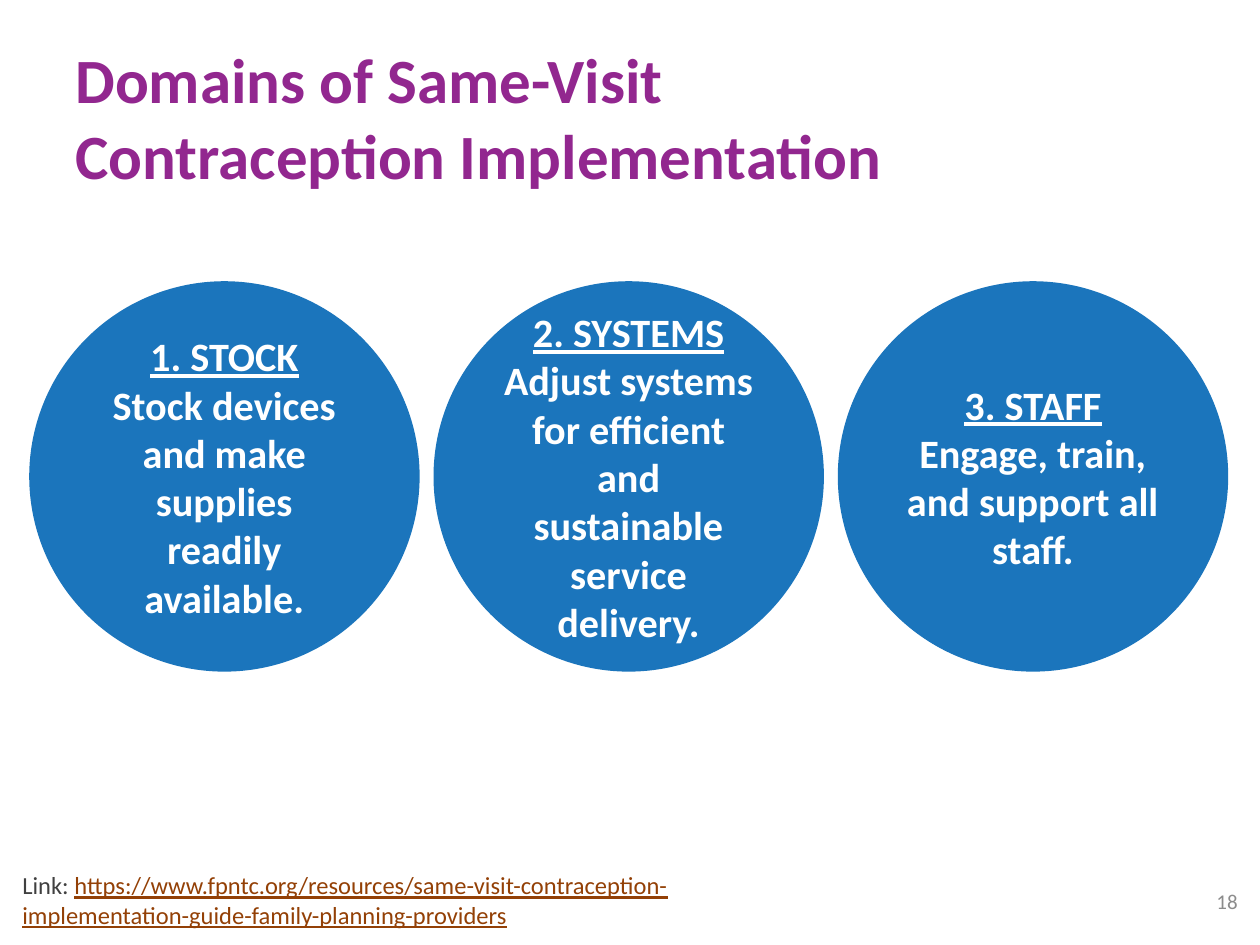
from dataclasses import dataclass

from pptx import Presentation
from pptx import util as u
from pptx.dml import color
from pptx.enum import shapes, text


@dataclass(frozen=True)
class Theme:
    font: str = "Calibri"
    title: str = "92278F"
    disc: str = "1B75BC"
    white: str = "FFFFFF"
    body: str = "404040"
    link: str = "934006"
    page: str = "8C8C8C"
    title_pt: int = 36
    disc_pt: int = 23
    link_pt: int = 14
    page_pt: int = 12


THEME = Theme()
DOMAINS = [
    ("1. STOCK", "Stock devices and make supplies readily available."),
    ("2. SYSTEMS",
     "Adjust systems for efficient and sustainable service delivery."),
    ("3. STAFF", "Engage, train, and support all staff."),
]
URL = ("https://www.fpntc.org/resources/same-visit-contraception-"
       "implementation-guide-family-planning-providers")


def rgb(tone):
    return color.RGBColor.from_string(tone)


def style(para, size, tone, bold=False, line=False, align=text.PP_ALIGN.LEFT):
    para.alignment = align
    font = para.font
    font.name, font.size = THEME.font, u.Pt(size)
    font.bold, font.underline = bold, line
    font.color.rgb = rgb(tone)


def add_text(slide, box, words, size, tone, anchor=text.MSO_ANCHOR.MIDDLE,
             **look):
    frame = slide.shapes.add_textbox(*map(u.Cm, box)).text_frame
    frame.word_wrap = True
    frame.vertical_anchor = anchor
    para = frame.paragraphs[0]
    para.add_run().text = words
    style(para, size, tone, **look)
    return para


def add_disc(slide, left, top, side, head, body):
    disc = slide.shapes.add_shape(
        shapes.MSO_SHAPE.OVAL, *map(u.Cm, (left, top, side, side)))
    disc.shadow.inherit = False
    disc.fill.solid()
    disc.fill.fore_color.rgb = rgb(THEME.disc)
    disc.line.fill.background()
    frame = disc.text_frame
    frame.word_wrap = True
    frame.vertical_anchor = text.MSO_ANCHOR.MIDDLE
    frame.margin_left = frame.margin_right = u.Cm(0.23)
    frame.text = f"{head}\n{body}"
    for para, line in zip(frame.paragraphs, (True, False)):
        style(para, THEME.disc_pt, THEME.white, bold=True, line=line,
              align=text.PP_ALIGN.CENTER)


def main():
    deck = Presentation()
    deck.slide_width, deck.slide_height = u.Cm(25.4), u.Cm(19.05)
    slide = deck.slides.add_slide(deck.slide_layouts[6])

    # Title
    add_text(slide, (1.27, 0.76, 17.15, 3.18),
             "Domains of Same-Visit Contraception Implementation",
             THEME.title_pt, THEME.title, bold=True)

    # Three domains in a row
    side, step = 7.87, 8.15
    for i, (head, body) in enumerate(DOMAINS):
        add_disc(slide, 0.59 + i * step, 5.67, side, head, body)

    # Source link
    para = add_text(slide, (0.2, 17.42, 14.17, 1.45), "Link: ",
                    THEME.link_pt, THEME.body, anchor=text.MSO_ANCHOR.TOP)
    link = para.add_run()
    link.text = URL
    link.font.underline = True
    link.font.color.rgb = rgb(THEME.link)

    # Page number
    add_text(slide, (23.93, 17.65, 1.27, 1.02), "18", THEME.page_pt,
             THEME.page, align=text.PP_ALIGN.RIGHT)

    deck.save("out.pptx")


if __name__ == "__main__":
    main()
